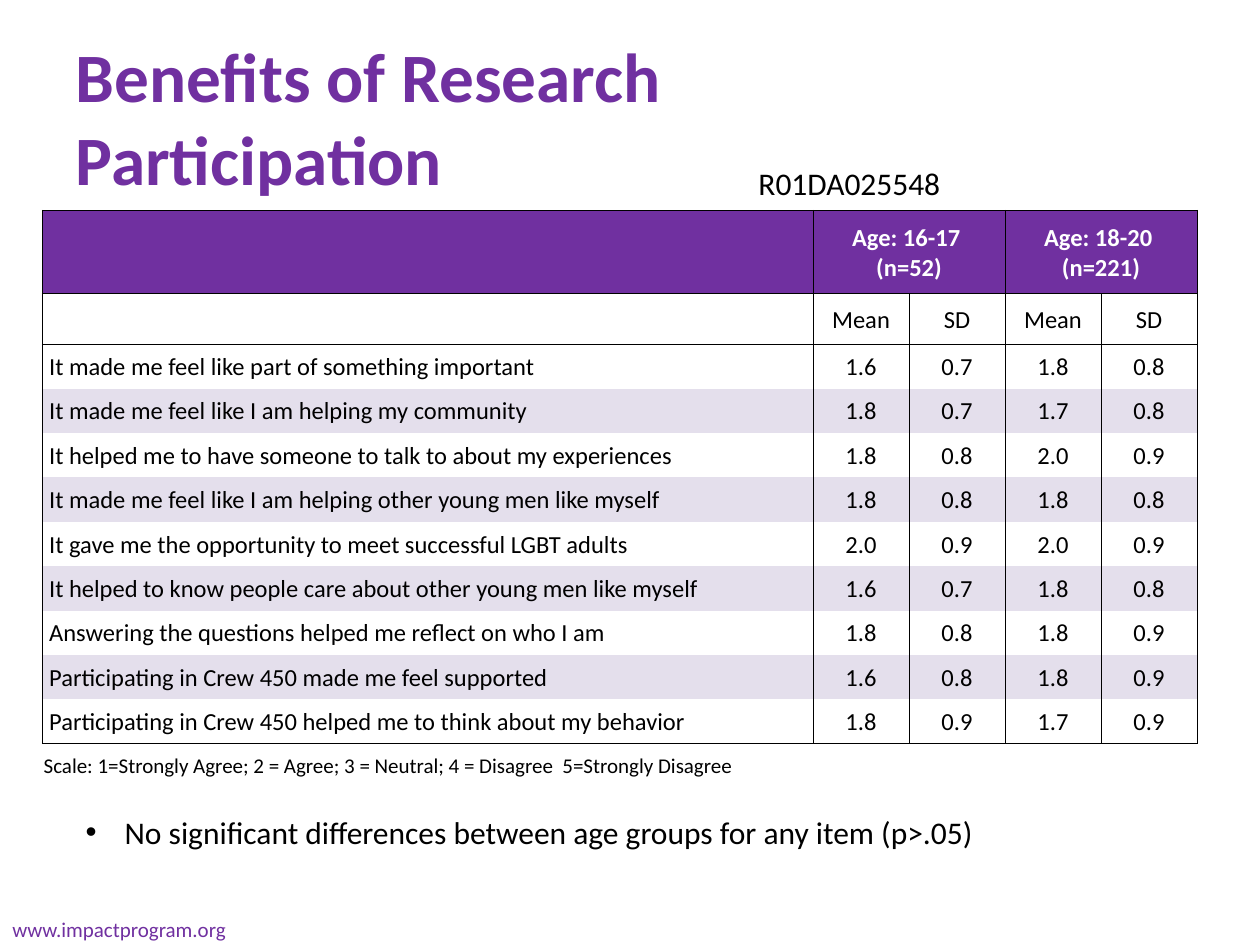
from dataclasses import dataclass

from lxml.etree import SubElement
from pptx import Presentation
from pptx.dml.color import RGBColor
from pptx.enum.text import MSO_ANCHOR as Anchor, MSO_AUTO_SIZE as AutoSize, PP_ALIGN as Align
from pptx.oxml.ns import qn
from pptx.util import Cm, Pt


@dataclass(frozen=True)
class Theme:
    font: str = "Calibri"
    purple: str = "7030A0"
    band: str = "E4DFEC"
    black: str = "000000"
    white: str = "FFFFFF"
    title_size: float = 39.6
    body_size: float = 18
    table_size: float = 14
    note_size: float = 12
    line_width: float = 0.5


GROUPS = (("Age: 16-17 ", "(n=52)"), ("Age: 18-20 ", "(n=221)"))
MEASURES = ("Mean", "SD") * len(GROUPS)
ITEMS = (
    ("It made me feel like part of something important", "1.6", "0.7", "1.8", "0.8"),
    ("It made me feel like I am helping my community", "1.8", "0.7", "1.7", "0.8"),
    ("It helped me to have someone to talk to about my experiences", "1.8", "0.8", "2.0", "0.9"),
    ("It made me feel like I am helping other young men like myself", "1.8", "0.8", "1.8", "0.8"),
    ("It gave me the opportunity to meet successful LGBT adults", "2.0", "0.9", "2.0", "0.9"),
    ("It helped to know people care about other young men like myself", "1.6", "0.7", "1.8", "0.8"),
    ("Answering the questions helped me reflect on who I am", "1.8", "0.8", "1.8", "0.9"),
    ("Participating in Crew 450 made me feel supported", "1.6", "0.8", "1.8", "0.9"),
    ("Participating in Crew 450 helped me to think about my behavior", "1.8", "0.9", "1.7", "0.9"),
)
SCALE = "Scale: 1=Strongly Agree; 2 = Agree; 3 = Neutral; 4 = Disagree  5=Strongly Disagree"


class SlideBuilder:
    def __init__(self, presentation, theme):
        self.theme = theme
        self.slide = presentation.slides.add_slide(presentation.slide_layouts[1])

    def add_run(self, paragraph, text, size, color, bold=False):
        run = paragraph.add_run()
        run.text = text
        run.font.name = self.theme.font
        run.font.size = Pt(size)
        run.font.bold = bold
        run.font.color.rgb = RGBColor.from_string(color)

    def place(self, shape, left, top, width, height):
        shape.left, shape.top = Cm(left), Cm(top)
        shape.width, shape.height = Cm(width), Cm(height)

    def title(self, text, *box):
        shape = self.slide.shapes.title
        self.place(shape, *box)
        frame = shape.text_frame
        frame.auto_size = AutoSize.NONE
        frame.vertical_anchor = Anchor.MIDDLE
        paragraph = frame.paragraphs[0]
        paragraph.alignment = Align.LEFT
        self.add_run(paragraph, text, self.theme.title_size, self.theme.purple, True)

    def bullet(self, text, *box):
        shape = self.slide.placeholders[1]
        self.place(shape, *box)
        shape.text_frame.auto_size = AutoSize.NONE
        paragraph = shape.text_frame.paragraphs[0]
        paragraph.space_before = Pt(0)
        properties = paragraph._p.get_or_add_pPr()
        properties.set("marL", str(Cm(0.79)))
        properties.set("indent", str(-Cm(0.79)))
        SubElement(properties, qn("a:buFont"), typeface="Arial")
        SubElement(properties, qn("a:buChar"), char="•")
        self.add_run(paragraph, text, self.theme.body_size, self.theme.black)

    def label(self, text, size, color, *box):
        shape = self.slide.shapes.add_textbox(*map(Cm, box))
        shape.text_frame.word_wrap = False
        self.add_run(shape.text_frame.paragraphs[0], text, size, color)

    def borders(self, cell, sides):
        properties = cell._tc.get_or_add_tcPr()
        for side in "LRTB":
            line = SubElement(properties, qn(f"a:ln{side}"), w=str(Pt(self.theme.line_width)))
            if side in sides:
                fill = SubElement(line, qn("a:solidFill"))
                SubElement(fill, qn("a:srgbClr"), val=self.theme.black)
            else:
                SubElement(line, qn("a:noFill"))

    def cell(self, cell, lines=(), size=None, color=None, bold=False, align=Align.CENTER, indent=0.03):
        cell.vertical_anchor = Anchor.MIDDLE
        cell.margin_left = Cm(indent)
        cell.margin_right = cell.margin_top = Cm(0.03)
        cell.margin_bottom = 0
        paragraph = cell.text_frame.paragraphs[0]
        paragraph.alignment = align
        for index, line in enumerate(lines):
            if index:
                paragraph.add_line_break()
            self.add_run(paragraph, line, size or self.theme.table_size, color or self.theme.black, bold)

    def table(self, left, top, column_widths, row_heights):
        frame = self.slide.shapes.add_table(
            len(row_heights), len(column_widths), Cm(left), Cm(top),
            Cm(sum(column_widths)), Cm(sum(row_heights)))
        table = frame.table
        table.first_row = table.horz_banding = False
        for column, width in zip(table.columns, column_widths):
            column.width = Cm(width)
        for row, height in zip(table.rows, row_heights):
            row.height = Cm(height)

        last_item = len(ITEMS) + 1
        for index, row in enumerate(table.rows):
            sides = "T" if index > last_item else "LR"
            sides += "TB" if index < 2 else "T" if index == 2 else "B" if index == last_item else ""
            for cell in row.cells:
                self.borders(cell, sides)
                if index == 0 or (2 < index < last_item and index % 2):
                    cell.fill.solid()
                    color = self.theme.band if index else self.theme.purple
                    cell.fill.fore_color.rgb = RGBColor.from_string(color)
                else:
                    cell.fill.background()

        for index, lines in enumerate(GROUPS):
            column = 1 + 2 * index
            table.cell(0, column).merge(table.cell(0, column + 1))
            self.cell(table.cell(0, column), lines, color=self.theme.white, bold=True)
        for column, measure in enumerate(MEASURES, 1):
            self.cell(table.cell(1, column), [measure])
        for row, (item, *values) in enumerate(ITEMS, 2):
            self.cell(table.cell(row, 0), [item], align=Align.LEFT, indent=0.14)
            for column, value in enumerate(values, 1):
                self.cell(table.cell(row, column), [value])
        note = table.cell(last_item + 1, 0)
        note.merge(table.cell(last_item + 1, len(column_widths) - 1))
        self.cell(note, [SCALE], size=self.theme.note_size, align=Align.LEFT)


def main():
    theme = Theme()
    presentation = Presentation()
    presentation.slide_width, presentation.slide_height = Cm(25.4), Cm(19.05)
    builder = SlideBuilder(presentation, theme)
    builder.label("www.impactprogram.org", theme.note_size, theme.purple, 0, 18.36, 4.85, 1.55)
    builder.title("Benefits of Research Participation", 1.27, 0.76, 14.4, 3.18)
    builder.table(0.85, 4.24, [15.54] + [1.935] * 4, [1.68] + [0.895] * (len(ITEMS) + 2))
    builder.bullet("No significant differences between age groups for any item (p>.05)", 1.47, 16.26, 22.86, 1.02)
    builder.label("R01DA025548", theme.body_size, theme.black, 15.04, 3.18, 4.22, 1.02)
    presentation.save("out.pptx")


if __name__ == "__main__":
    main()
